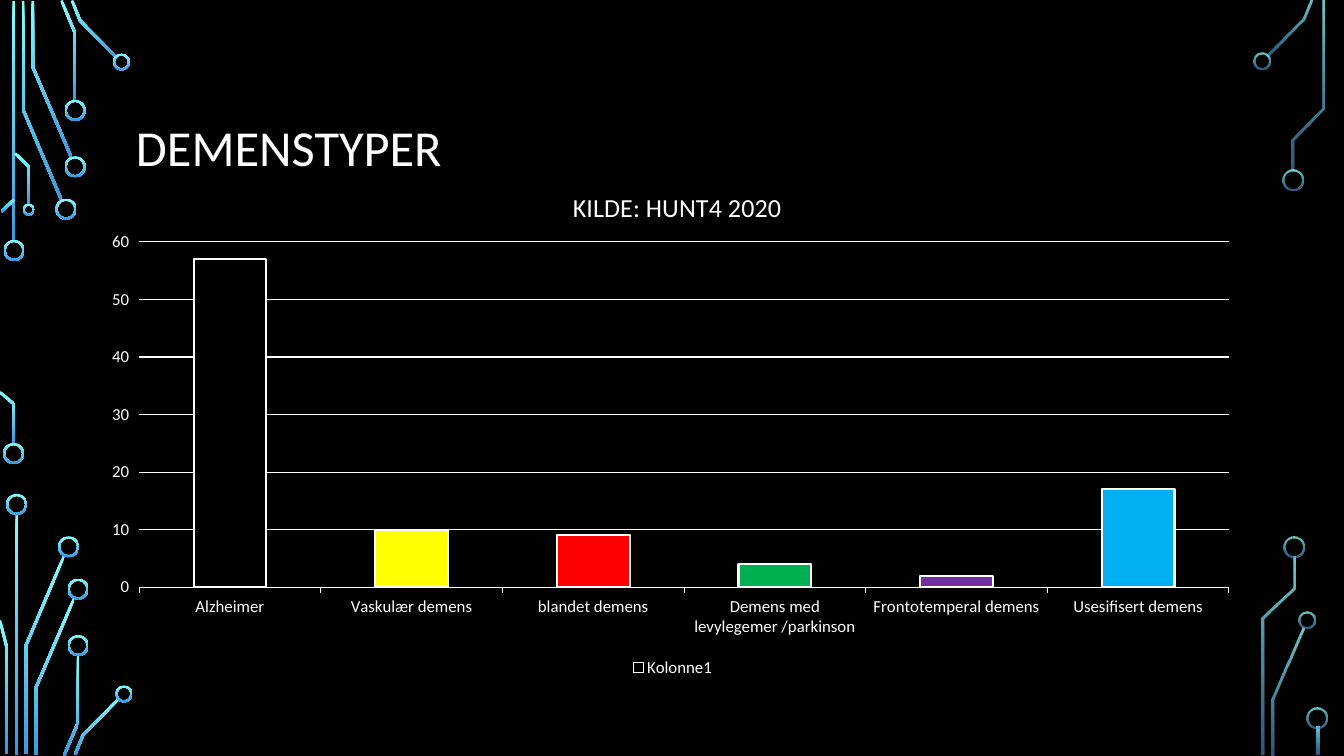
from math import hypot
from typing import NamedTuple

from lxml import etree
from pptx import Presentation, util as u
from pptx.chart import data
from pptx.dml import color
from pptx.enum import chart as kinds, shapes, text
from pptx.oxml import ns

# Grid: one cell is a hundredth of an inch
COLS, ROWS = 1333, 750
CELL = u.Inches(0.01)
FONT = "Calibri"
HUES = {"black": "000000", "white": "FFFFFF", "aqua": "82FFFF", "blue": "3D97DE",
        "yellow": "FFFF00", "red": "FF0000", "green": "00B050",
        "purple": "7030A0", "sky": "00B0F0"}
WIRE = 2.6   # width of a circuit line
RIM = 2      # thickness of a ring


class Trace(NamedTuple):
    points: list[tuple[float, float]]
    faded: bool = False


class Ring(NamedTuple):
    x: float
    y: float
    size: float = 21
    faded: bool = False


class Bar(NamedTuple):
    label: str
    value: int
    hue: str


TRACES = [
    # Upper left
    Trace([(13.5, 1), (13.5, 240)]),
    Trace([(23, 1), (23, 109), (61, 198.5)]),
    Trace([(32.5, 1), (32.5, 66.5), (71, 156.5)]),
    Trace([(61, 0.5), (74.5, 33), (74.5, 100)]),
    Trace([(71.5, 0.5), (79.5, 20.5), (115.5, 57)]),
    Trace([(1.5, 210), (14, 198)]),
    Trace([(0, 389), (14, 401), (14, 441)]),
    Trace([(15, 152), (29, 165.5), (29, 203)]),
    # Lower left
    Trace([(16.5, 510), (16.5, 749)]),
    Trace([(63.5, 551.5), (25.5, 641), (25.5, 748)]),
    Trace([(0, 615.5), (6.5, 641), (6.5, 748)]),
    Trace([(73.5, 593.5), (35.5, 682.5), (35.5, 749)]),
    Trace([(77.5, 650), (77.5, 717), (63.5, 749.5)]),
    Trace([(118, 693), (82.5, 729), (74.5, 748.5)]),
    # Right
    Trace([(1300.5, 0.5), (1292.5, 19.5), (1257, 55.5)], True),
    Trace([(1312.5, 1), (1312.5, 107.5), (1282, 138.5), (1282, 169)], True),
    Trace([(1283.5, 552), (1283.5, 583.5), (1252.5, 613.5), (1252.5, 749)], True),
    Trace([(1293, 623.5), (1262.5, 693.5), (1262.5, 749)], True),
    Trace([(1307.5, 721), (1307.5, 749)], True),
]
RINGS = [
    Ring(14, 248.5), Ring(13.5, 450), Ring(65.5, 207.5), Ring(74.5, 165.5),
    Ring(74.5, 109.5), Ring(120.5, 61.5, 17), Ring(28.5, 208, 12),
    Ring(16.5, 500.5), Ring(68, 542.5), Ring(77.5, 584.5), Ring(77.5, 640.5),
    Ring(123, 688.5, 17),
    Ring(1251.5, 60.5, 17, True), Ring(1282.5, 178.5, 21, True),
    Ring(1296.5, 615.5, 17, True), Ring(1283, 542.5, 21, True),
    Ring(1306.5, 712, 21, True),
]
BARS = [
    Bar("Alzheimer", 57, "black"),
    Bar("Vaskulær demens", 10, "yellow"),
    Bar("blandet demens", 9, "red"),
    Bar("Demens med levylegemer /parkinson", 4, "green"),
    Bar("Frontotemperal demens", 2, "purple"),
    Bar("Usesifisert demens", 17, "sky"),
]


def rgb(hue: str) -> color.RGBColor:
    return color.RGBColor.from_string(HUES[hue])


def cells(*nums: float) -> list[int]:
    return [round(num * CELL) for num in nums]


def style(font, size: float) -> None:
    font.name, font.size, font.bold = FONT, u.Pt(size), False
    font.color.rgb = rgb("white")


def glow(shape, faded: bool) -> None:
    """Fill a circuit part from aqua at the top to blue at the foot."""
    shape.shadow.inherit = False
    shape.line.fill.background()
    shape.fill.gradient()
    shape.fill.gradient_angle = 270
    for stop, hue, share in zip(shape.fill.gradient_stops, ("aqua", "blue"), (80, 60)):
        stop.position = 0 if hue == "aqua" else 1
        stop.color.rgb = rgb(hue)
        if faded:
            mark = [tag for tag in shape.element.iter(ns.qn("a:srgbClr"))
                    if tag.get("val") == HUES[hue]][0]
            etree.SubElement(mark, ns.qn("a:alpha"), val=str(share * 1000))


def draw_trace(slide, trace: Trace) -> None:
    """Widen a bent line into a ribbon with mitred corners."""
    pts = trace.points
    norms = []
    for (ax, ay), (bx, by) in zip(pts, pts[1:]):
        span = hypot(bx - ax, by - ay)
        norms.append(((ay - by) / span, (bx - ax) / span))
    left, right = [], []
    for (x, y), (ax, ay), (bx, by) in zip(pts, norms[:1] + norms, norms + norms[-1:]):
        reach = WIRE / 2 / (1 + ax * bx + ay * by)
        dx, dy = (ax + bx) * reach, (ay + by) * reach
        left.append(cells(x + dx, y + dy))
        right.append(cells(x - dx, y - dy))
    edge = left + right[::-1]
    form = slide.shapes.build_freeform(*edge[0])
    form.add_line_segments(edge[1:], close=True)
    glow(form.convert_to_shape(), trace.faded)


def draw_ring(slide, ring: Ring) -> None:
    half = ring.size / 2
    donut = slide.shapes.add_shape(
        shapes.MSO_SHAPE.DONUT,
        *cells(ring.x - half, ring.y - half, ring.size, ring.size))
    donut.adjustments[0] = RIM / ring.size
    glow(donut, ring.faded)


def draw_title(slide) -> None:
    box = slide.shapes.add_textbox(*cells(125, 68, 1083, 162))
    frame = box.text_frame
    frame.word_wrap = True
    frame.vertical_anchor = text.MSO_ANCHOR.MIDDLE
    frame.text = "DEMENSTYPER"
    frame.paragraphs[0].line_spacing = 0.9
    style(frame.paragraphs[0].runs[0].font, 36)


def place(node, **shares: float) -> None:
    """Pin a chart part at shares of the chart's size."""
    spot = node.find(ns.qn("c:layout"))
    if spot is None:
        spot = etree.Element(ns.qn("c:layout"))
        node.insert(0, spot)
    hand = etree.SubElement(spot, ns.qn("c:manualLayout"))
    if "w" in shares:
        etree.SubElement(hand, ns.qn("c:layoutTarget"), val="inner")
    for key in "xy":
        etree.SubElement(hand, ns.qn(f"c:{key}Mode"), val="edge")
    for key, share in shares.items():
        etree.SubElement(hand, ns.qn(f"c:{key}"), val=str(share))


def draw_chart(slide) -> None:
    source = data.CategoryChartData()
    source.categories = [bar.label for bar in BARS]
    source.add_series("Kolonne1", [bar.value for bar in BARS])
    chart = slide.shapes.add_chart(kinds.XL_CHART_TYPE.COLUMN_CLUSTERED,
                                   *cells(92, 157, 1150, 519), source).chart
    style(chart.font, 12)
    # Heading and legend
    chart.has_title = True
    head = chart.chart_title.text_frame
    head.text = "KILDE: HUNT4 2020"
    style(head.paragraphs[0].runs[0].font, 18.6)
    chart.has_legend = True
    chart.legend.position = kinds.XL_LEGEND_POSITION.BOTTOM
    chart.legend.include_in_layout = False
    style(chart.legend.font, 12)
    # Axes
    rise, base = chart.value_axis, chart.category_axis
    rise.minimum_scale, rise.maximum_scale, rise.major_unit = 0, 60, 10
    for axis in (rise, base):
        axis.major_tick_mark = kinds.XL_TICK_MARK.OUTSIDE
        style(axis.tick_labels.font, 12)
    rise.format.line.fill.background()
    for line in (rise.major_gridlines.format.line, base.format.line):
        line.color.rgb, line.width = rgb("white"), u.Pt(0.75)
    # Bars
    plot = chart.plots[0]
    plot.gap_width, plot.vary_by_categories = 150, False
    row = plot.series[0]
    row.invert_if_negative = False
    for part, hue in [(row, "black")] + [
            (row.points[i], bar.hue) for i, bar in enumerate(BARS) if i]:
        part.format.fill.solid()
        part.format.fill.fore_color.rgb = rgb(hue)
        part.format.line.color.rgb = rgb("white")
        part.format.line.width = u.Pt(1.5)
    tree = chart.element.find(ns.qn("c:chart"))
    place(tree.find(ns.qn("c:title")), x=0.41, y=0.05)
    place(tree.find(ns.qn("c:plotArea")), x=0.04, y=0.16, w=0.94, h=0.66)


def main() -> None:
    deck = Presentation()
    deck.slide_width, deck.slide_height = cells(COLS, ROWS)
    slide = deck.slides.add_slide(deck.slide_layouts[6])
    slide.background.fill.solid()
    slide.background.fill.fore_color.rgb = rgb("black")
    for trace in TRACES:
        draw_trace(slide, trace)
    for ring in RINGS:
        draw_ring(slide, ring)
    draw_title(slide)
    draw_chart(slide)
    deck.save("out.pptx")


if __name__ == "__main__":
    main()
